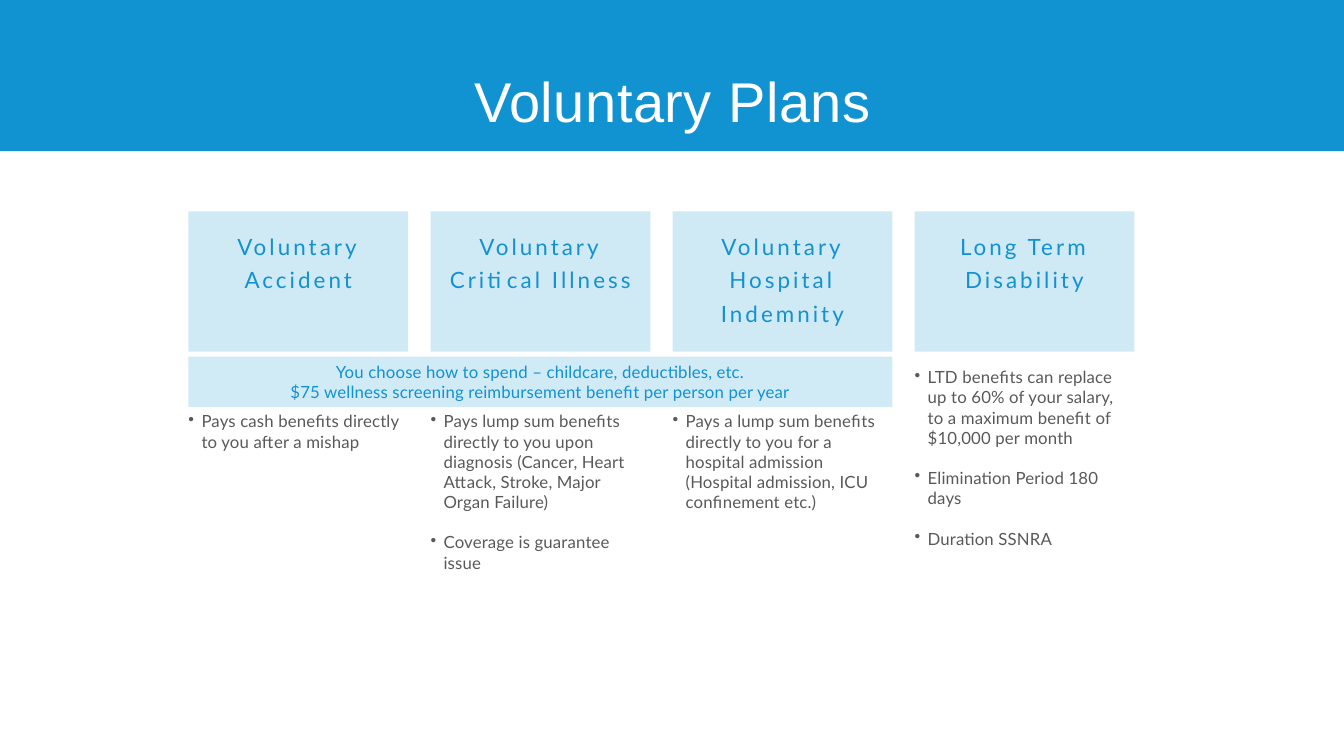
from dataclasses import dataclass

from lxml.etree import SubElement
from pptx import Presentation
from pptx.dml.color import RGBColor
from pptx.enum.shapes import MSO_SHAPE
from pptx.enum.text import MSO_ANCHOR, MSO_AUTO_SIZE, PP_ALIGN
from pptx.oxml.ns import qn
from pptx.util import Cm, Pt

TITLE = "Voluntary Plans"
SHARED_BENEFITS = [
    "You choose how to spend – childcare, deductibles, etc.",
    "$75 wellness screening reimbursement benefit per person per year",
]
# Each plan: heading, whether the shared benefits apply, bullets
PLANS = [
    ("Voluntary Accident", True,
     ["Pays cash benefits directly to you after a mishap"]),
    ("Voluntary Critical Illness", True,
     ["Pays lump sum benefits directly to you upon diagnosis "
      "(Cancer, Heart Attack, Stroke, Major Organ Failure)",
      "Coverage is guarantee issue"]),
    ("Voluntary Hospital Indemnity", True,
     ["Pays a lump sum benefits directly to you for a hospital admission "
      "(Hospital admission, ICU confinement etc.)"]),
    ("Long Term Disability", False,
     ["LTD benefits can replace up to 60% of your salary, "
      "to a maximum benefit of $10,000 per month",
      "Elimination Period 180 days",
      "Duration SSNRA"]),
]


@dataclass(frozen=True)
class Theme:
    blue: RGBColor = RGBColor(0x11, 0x92, 0xD1)
    pale_blue: RGBColor = RGBColor(0xD0, 0xEA, 0xF6)
    grey: RGBColor = RGBColor(0x59, 0x59, 0x59)
    white: RGBColor = RGBColor(0xFF, 0xFF, 0xFF)
    title_font: str = "Arial"
    body_font: str = "Lato"
    title_size: int = 40
    heading_size: int = 16
    body_size: int = 12


THEME = Theme()
SLIDE_WIDTH, SLIDE_HEIGHT = Cm(33.87), Cm(19.05)
BAND_HEIGHT = Cm(3.81)
CARD_LEFT, CARD_TOP = Cm(4.75), Cm(5.33)
CARD_WIDTH, CARD_HEIGHT = Cm(5.54), Cm(3.53)
CARD_PITCH = Cm(6.1)
BAR_TOP, BAR_HEIGHT = Cm(8.99), Cm(1.27)
BULLETS_BELOW_BAR, BULLETS_BELOW_CARD = Cm(10.36), Cm(9.25)
BULLETS_HEIGHT = Cm(4.1)
BULLET_INDENT = Cm(0.33)


def add_box(slide, left, top, width, height, color):
    box = slide.shapes.add_shape(MSO_SHAPE.RECTANGLE, left, top, width, height)
    box.shadow.inherit = False
    box.fill.solid()
    box.fill.fore_color.rgb = color
    box.line.fill.background()
    return box


def set_margins(frame, side=0, top=0):
    frame.margin_left = frame.margin_right = side
    frame.margin_top, frame.margin_bottom = top, 0
    frame.vertical_anchor = MSO_ANCHOR.TOP
    frame.word_wrap = True


def style_text(frame, size, color, spacing, font=THEME.body_font, align=PP_ALIGN.CENTER):
    """Format every run; spacing is the letter spacing in points."""
    for paragraph in frame.paragraphs:
        paragraph.alignment = align
        for run in paragraph.runs:
            run.font.name = font
            run.font.size = Pt(size)
            run.font.color.rgb = color
            run.font._element.set("spc", str(round(spacing * 100)))


def add_title(slide):
    title = slide.shapes.title
    band = add_box(slide, 0, 0, SLIDE_WIDTH, BAND_HEIGHT, THEME.blue)
    title._element.addprevious(band._element)
    title.left, title.top, title.width, title.height = Cm(2.64), Cm(0.84), Cm(28.63), Cm(2.31)
    frame = title.text_frame
    frame.text = TITLE
    frame.auto_size = MSO_AUTO_SIZE.NONE
    set_margins(frame)
    frame.paragraphs[0].line_spacing = 1.5
    style_text(frame, THEME.title_size, THEME.white, 0.4, THEME.title_font)


def add_card(slide, left, heading):
    card = add_box(slide, left, CARD_TOP, CARD_WIDTH, CARD_HEIGHT, THEME.blue)
    fill_color = card._element.spPr.find(qn("a:solidFill"))[0]
    SubElement(fill_color, qn("a:alpha")).set("val", "20000")
    frame = card.text_frame
    frame.text = heading
    set_margins(frame, side=Cm(0.25), top=Cm(0.38))
    frame.paragraphs[0].line_spacing = Pt(23.8)
    style_text(frame, THEME.heading_size, THEME.blue, 2.2)


def add_bullets(slide, left, top, bullets):
    frame = slide.shapes.add_textbox(left, top, Cm(5.5), BULLETS_HEIGHT).text_frame
    set_margins(frame)
    frame.text = "\n".join(bullets)
    for index, paragraph in enumerate(frame.paragraphs):
        properties = paragraph._p.get_or_add_pPr()
        properties.set("marL", str(BULLET_INDENT))
        properties.set("indent", str(-BULLET_INDENT))
        SubElement(properties, qn("a:buChar")).set("char", "•")
        if index:
            paragraph.space_before = Pt(THEME.body_size * 1.2)
    style_text(frame, THEME.body_size, THEME.grey, 0.1, align=PP_ALIGN.LEFT)


def add_shared_bar(slide):
    shared_count = sum(shared for _, shared, _ in PLANS)
    width = (shared_count - 1) * CARD_PITCH + CARD_WIDTH
    bar = add_box(slide, CARD_LEFT, BAR_TOP, width, BAR_HEIGHT, THEME.pale_blue)
    bar.text_frame.text = "\n".join(SHARED_BENEFITS)
    style_text(bar.text_frame, THEME.body_size, THEME.blue, 0.1)


def main():
    deck = Presentation()
    deck.slide_width, deck.slide_height = SLIDE_WIDTH, SLIDE_HEIGHT
    slide = deck.slides.add_slide(deck.slide_layouts.get_by_name("Title Only"))
    add_title(slide)
    for column, (heading, shared, bullets) in enumerate(PLANS):
        left = CARD_LEFT + column * CARD_PITCH
        add_card(slide, left, heading)
        add_bullets(slide, left, BULLETS_BELOW_BAR if shared else BULLETS_BELOW_CARD, bullets)
    add_shared_bar(slide)
    deck.save("out.pptx")


if __name__ == "__main__":
    main()
